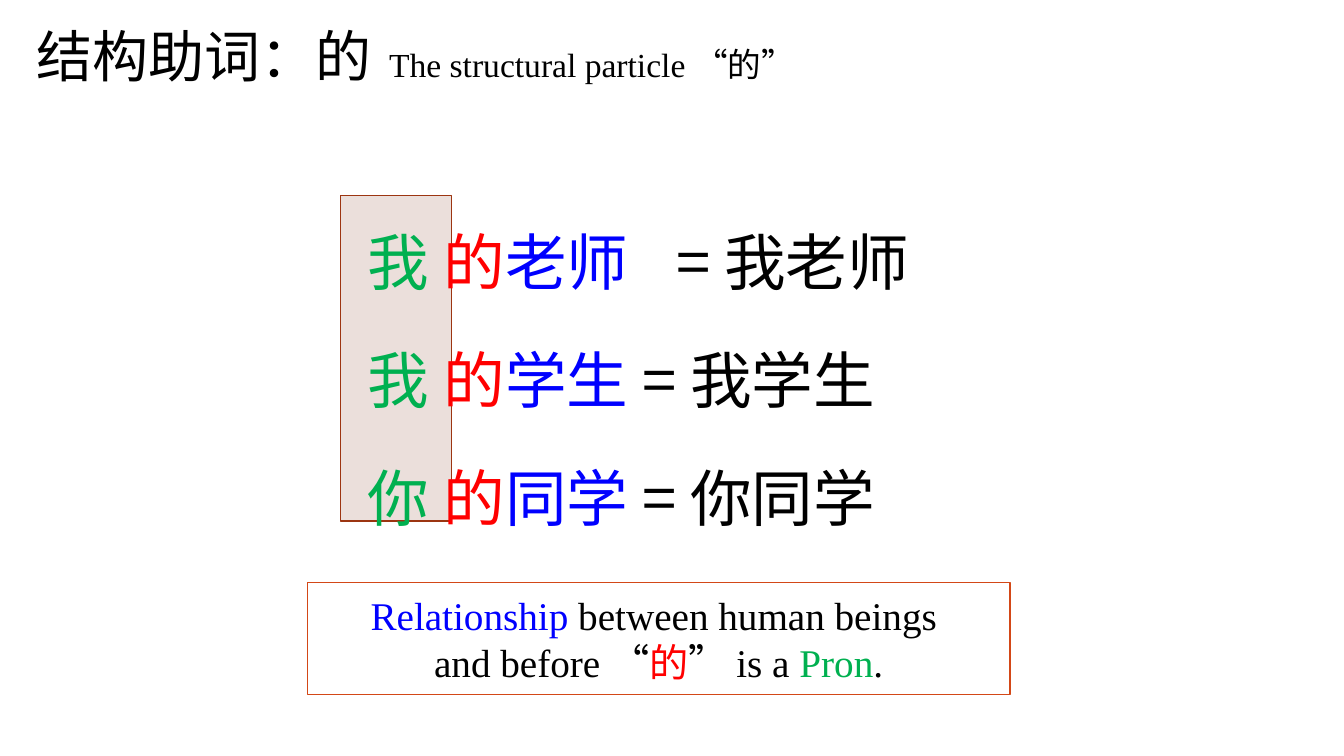
from lxml import etree
from pptx import Presentation
from pptx.dml.color import RGBColor
from pptx.enum.shapes import MSO_SHAPE
from pptx.enum.text import MSO_ANCHOR, MSO_AUTO_SIZE, PP_ALIGN
from pptx.oxml.ns import qn
from pptx.util import Pt

RECTANGLE = MSO_SHAPE.RECTANGLE
TOP, MIDDLE = MSO_ANCHOR.TOP, MSO_ANCHOR.MIDDLE
LEFT, CENTER = PP_ALIGN.LEFT, PP_ALIGN.CENTER
NO_FIT = MSO_AUTO_SIZE.NONE

THEME = {
    "chinese": "Noto Sans CJK SC", "english": "Times New Roman",
    "text": "000000", "pronoun": "00B050", "particle": "FF0000", "noun": "0000FF",
    "column": "EBDFDB", "column_line": "9C3511",
    "note": "FFFFFF", "note_line": "D34817",
    "title_size": 40, "subtitle_size": 24, "phrase_size": 44, "note_size": 28,
}

# Content: each span is (text, colour, font, size)
TITLE = [[
    ("结构助词：的\t", "text", "chinese", "title_size"),
    ("The structural particle ", "text", "english", "subtitle_size"),
    ("“的”", "text", "chinese", "subtitle_size"),
]]
PHRASES = [  # pronoun, noun, short form on the same line
    ("我 ", "老师", ""),
    ("我 ", "学生 ", "= 我学生"),
    ("你 ", "同学 ", "= 你同学"),
]
FIRST_SHORT_FORM = "= 我老师"
NOTE = [
    [("Relationship", "noun", "english", "note_size"),
     (" between human beings ", "text", "english", "note_size")],
    [("and before ", "text", "english", "note_size"),
     ("“", "text", "chinese", "note_size"),
     ("的", "particle", "chinese", "note_size"),
     ("”", "text", "chinese", "note_size"),
     (" is a ", "text", "english", "note_size"),
     ("Pron", "pronoun", "english", "note_size"),
     (".", "text", "english", "note_size")],
]

# Layout in points
TITLE_BOX = (18.7, 15, 677, 53)
COLUMN_BOX = (243.4, 139.7, 79.2, 232.6)
PHRASE_BOX = (255.6, 125, 476, 415)
SHORT_FORM_BOX = (476, 125, 192, 93)
NOTE_BOX = (219.6, 416.2, 501.8, 79.9)
TITLE_LINE, PHRASE_LINE, NOTE_LINE = 45, 84.3, 33.5
SUBTITLE_TAB = 312


def color(name):
    return RGBColor.from_string(THEME[name])


def place(box, bounds):
    box.left, box.top, box.width, box.height = map(Pt, bounds)


def phrase_span(text, tint):
    return (text, tint, "chinese", "phrase_size")


def write(box, lines, line_height, align=LEFT, anchor=TOP, wrap=True, tab=None):
    frame = box.text_frame
    frame.word_wrap, frame.auto_size = wrap, NO_FIT
    frame.vertical_anchor = anchor
    for index, spans in enumerate(lines):
        para = frame.add_paragraph() if index else frame.paragraphs[0]
        para.alignment, para.line_spacing = align, Pt(line_height)
        para.space_before = para.space_after = Pt(0)
        properties = para._p.get_or_add_pPr()
        properties.set("marL", "0")
        properties.set("indent", "0")
        etree.SubElement(properties, qn("a:buNone"))
        if tab:
            stops = etree.SubElement(properties, qn("a:tabLst"))
            etree.SubElement(stops, qn("a:tab"), pos=str(Pt(tab)), algn="l")
        for text, tint, face, size in spans:
            span = para.add_run()
            span.text = text
            span.font.name, span.font.size = THEME[face], Pt(THEME[size])
            span.font.color.rgb = color(tint)
            etree.SubElement(span._r.get_or_add_rPr(), qn("a:ea"),
                             typeface=THEME["chinese"])


def add_panel(page, bounds, fill):
    panel = page.shapes.add_shape(RECTANGLE, *map(Pt, bounds))
    panel.shadow.inherit = False
    panel.fill.solid()
    panel.fill.fore_color.rgb = color(fill)
    panel.line.color.rgb = color(fill + "_line")
    panel.line.width = Pt(1)
    return panel


deck = Presentation()
deck.slide_width, deck.slide_height = Pt(960), Pt(540)
page = deck.slides.add_slide(deck.slide_layouts[1])
title, phrases = page.shapes.title, page.placeholders[1]

# Title with English subtitle
place(title, TITLE_BOX)
write(title, TITLE, TITLE_LINE, tab=SUBTITLE_TAB)

# Pronoun column, moved behind the phrases
column = add_panel(page, COLUMN_BOX, "column")
phrases._element.addprevious(column._element)

# Phrases with 的 and their short forms
place(phrases, PHRASE_BOX)
rows = []
for pronoun, noun, short_form in PHRASES:
    row = [phrase_span(pronoun, "pronoun"), phrase_span("的", "particle"),
           phrase_span(noun, "noun")]
    if short_form:
        row.append(phrase_span(short_form, "text"))
    rows.append(row)
write(phrases, rows, PHRASE_LINE)

short_box = page.shapes.add_textbox(*map(Pt, SHORT_FORM_BOX))
write(short_box, [[phrase_span(FIRST_SHORT_FORM, "text")]], PHRASE_LINE, wrap=False)

# Usage note
note = add_panel(page, NOTE_BOX, "note")
write(note, NOTE, NOTE_LINE, align=CENTER, anchor=MIDDLE)

deck.save("out.pptx")
